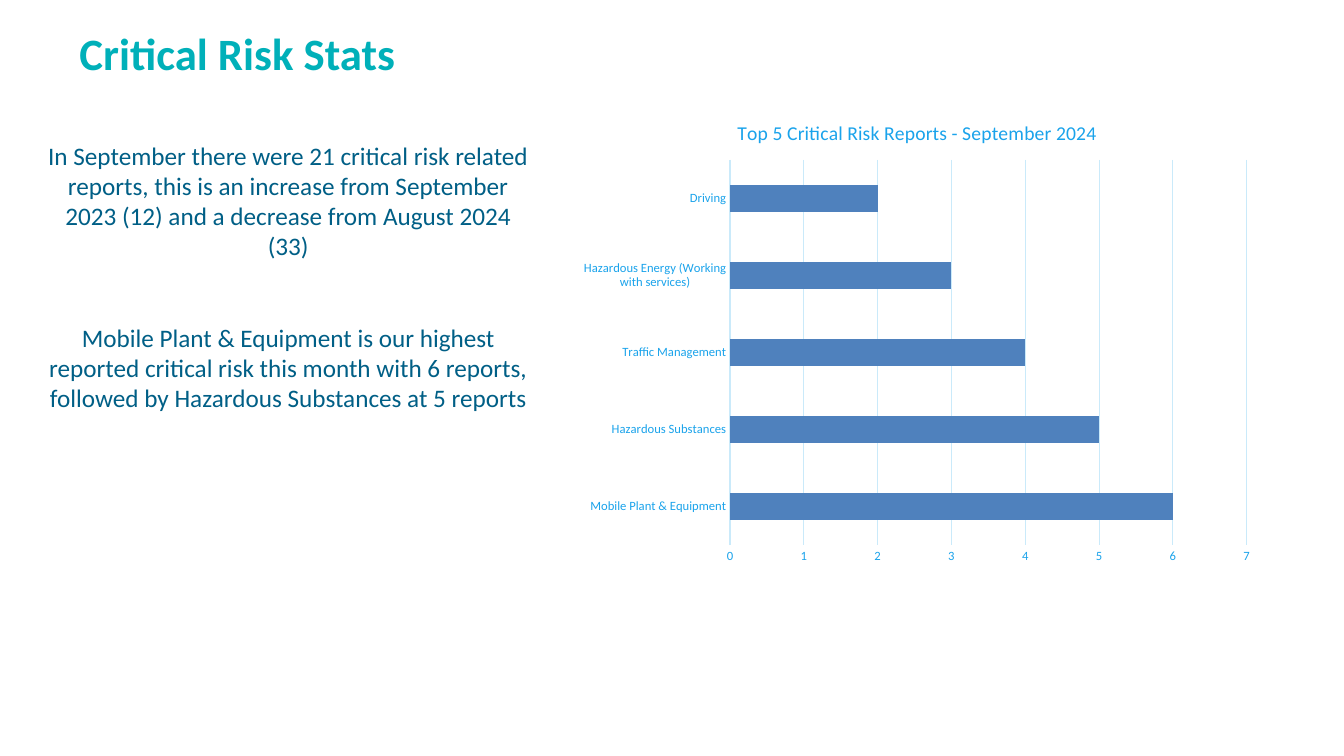
from dataclasses import dataclass

from lxml.etree import SubElement
from pptx import Presentation
from pptx.chart.data import CategoryChartData
from pptx.dml.color import RGBColor
from pptx.enum.chart import XL_CHART_TYPE, XL_TICK_MARK
from pptx.enum.text import MSO_ANCHOR, PP_ALIGN
from pptx.oxml.ns import qn
from pptx.slide import Slide
from pptx.text.text import Font
from pptx.util import Pt

TEAL = RGBColor(0x00, 0xB0, 0xB9)
NAVY = RGBColor(0x00, 0x5F, 0x86)
SKY = RGBColor(0x1A, 0xA3, 0xEB)
PALE_SKY = RGBColor(0xCA, 0xEA, 0xFA)
BAR_BLUE = RGBColor(0x4F, 0x81, 0xBD)
FONT_NAME = "Calibri"


@dataclass(frozen=True)
class Box:
    left: float
    top: float
    width: float
    height: float


@dataclass(frozen=True)
class RiskReport:
    risk: str
    count: int


TITLE_BOX = Box(49.7, 21.6, 860.4, 67)
SUMMARY_BOX = Box(23, 96.5, 365.8, 362.2)
CHART_BOX = Box(407.5, 72, 495.4, 337.7)
PLOT_FRACTIONS = {"x": 0.23, "y": 0.125, "w": 0.745, "h": 0.815}

SUMMARY = [
    "In September there were 21 critical risk related reports, this is an increase "
    "from September 2023 (12) and a decrease from August 2024 (33)",
    "Mobile Plant & Equipment is our highest reported critical risk this month with "
    "6 reports, followed by Hazardous Substances at 5 reports",
]

REPORTS = [
    RiskReport("Mobile Plant & Equipment", 6),
    RiskReport("Hazardous Substances", 5),
    RiskReport("Traffic Management", 4),
    RiskReport("Hazardous Energy (Working with services)", 3),
    RiskReport("Driving", 2),
]


def format_font(font: Font, size: float, color: RGBColor, bold: bool = False) -> None:
    font.name = FONT_NAME
    font.size = Pt(size)
    font.bold = bold
    font.color.rgb = color


def add_text(slide: Slide, box: Box, texts: list[str], *, size: float, color: RGBColor,
             bold: bool = False, alignment: PP_ALIGN = PP_ALIGN.LEFT,
             line_spacing: float | Pt = 1.0, gap: float = 0) -> None:
    shape = slide.shapes.add_textbox(Pt(box.left), Pt(box.top), Pt(box.width), Pt(box.height))
    frame = shape.text_frame
    frame.word_wrap = True
    frame.vertical_anchor = MSO_ANCHOR.TOP
    for index, text in enumerate(texts):
        paragraph = frame.add_paragraph() if index else frame.paragraphs[0]
        paragraph.alignment = alignment
        paragraph.line_spacing = line_spacing
        if index:
            paragraph.space_before = Pt(gap)
        run = paragraph.add_run()
        run.text = text
        format_font(run.font, size, color, bold)


def add_report_chart(slide: Slide, box: Box, title: str, reports: list[RiskReport]) -> None:
    data = CategoryChartData()
    data.categories = [report.risk for report in reports]
    data.add_series("Series 1", [report.count for report in reports])
    chart = slide.shapes.add_chart(XL_CHART_TYPE.BAR_CLUSTERED, Pt(box.left), Pt(box.top),
                                   Pt(box.width), Pt(box.height), data).chart
    format_font(chart.font, 10, SKY)
    chart.has_legend = False
    chart.has_title = True
    title_frame = chart.chart_title.text_frame
    title_frame.text = title
    format_font(title_frame.paragraphs[0].runs[0].font, 14, SKY)
    chart.chart_title.include_in_layout = False

    for axis in (chart.category_axis, chart.value_axis):
        axis.major_tick_mark = XL_TICK_MARK.NONE
        axis.minor_tick_mark = XL_TICK_MARK.NONE
        format_font(axis.tick_labels.font, 9, SKY)
    category_line = chart.category_axis.format.line
    value_axis = chart.value_axis
    value_axis.format.line.fill.background()
    value_axis.minimum_scale = 0
    value_axis.maximum_scale = 7
    value_axis.major_unit = 1
    value_axis.has_major_gridlines = True
    for line in (category_line, value_axis.major_gridlines.format.line):
        line.color.rgb = PALE_SKY
        line.width = Pt(0.75)

    plot = chart.plots[0]
    plot.gap_width = 182
    plot.vary_by_categories = False
    fill = plot.series[0].format.fill
    fill.solid()
    fill.fore_color.rgb = BAR_BLUE

    plot_area = chart.element.find(".//" + qn("c:plotArea"))
    layout = plot_area.find(qn("c:layout"))
    if layout is None:
        layout = SubElement(plot_area, qn("c:layout"))
        plot_area.insert(0, layout)
    manual = SubElement(layout, qn("c:manualLayout"))
    settings = {"layoutTarget": "inner", "xMode": "edge", "yMode": "edge", **PLOT_FRACTIONS}
    for name, value in settings.items():
        SubElement(manual, qn(f"c:{name}")).set("val", str(value))


def main() -> None:
    presentation = Presentation()
    presentation.slide_width = Pt(960)
    presentation.slide_height = Pt(540)
    slide = presentation.slides.add_slide(presentation.slide_layouts[6])
    add_text(slide, TITLE_BOX, ["Critical Risk Stats"], size=32, color=TEAL, bold=True,
             line_spacing=Pt(32))
    add_text(slide, SUMMARY_BOX, SUMMARY, size=18, color=NAVY,
             alignment=PP_ALIGN.CENTER, gap=43.5)
    add_report_chart(slide, CHART_BOX, "Top 5 Critical Risk Reports - September 2024", REPORTS)
    presentation.save("out.pptx")


if __name__ == "__main__":
    main()
